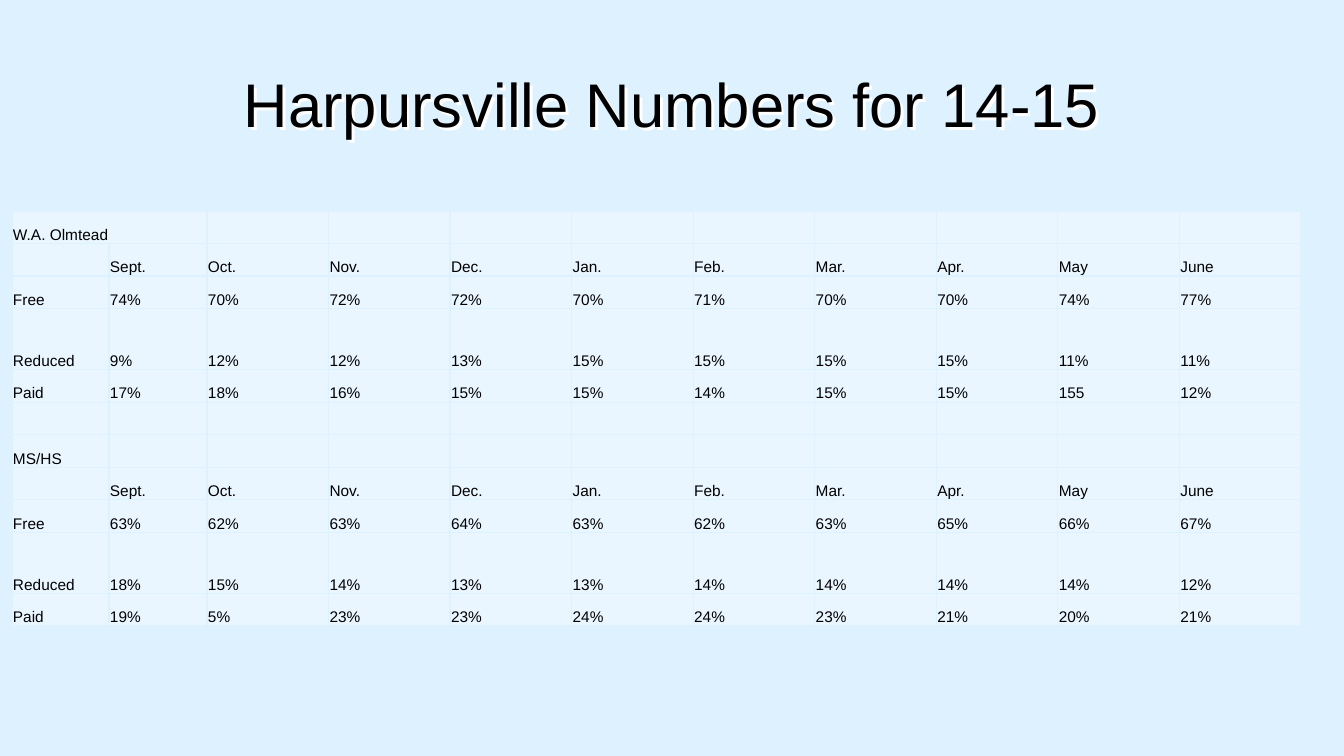
from dataclasses import dataclass

from lxml import etree
from pptx import Presentation
from pptx.dml.color import RGBColor
from pptx.enum.text import MSO_ANCHOR, PP_ALIGN
from pptx.oxml import parse_xml
from pptx.oxml.ns import nsdecls, qn
from pptx.util import Emu, Pt

MIDDLE, BOTTOM = MSO_ANCHOR.MIDDLE, MSO_ANCHOR.BOTTOM
CENTER = PP_ALIGN.CENTER
TITLE_ONLY = 5
SLIDE_W, SLIDE_H = 1344, 756
SCALE = 12192000 / SLIDE_W


@dataclass(frozen=True)
class Theme:
    font: str = "Arial"
    text: str = "000000"
    background: str = "DDF1FF"
    cell: str = "EAF6FF"
    border: str = "DDF1FF"
    shadow: str = "FFFFFF"
    title_size: int = 44
    cell_size: int = 11


def px(n):
    return Emu(round(n * SCALE))


def split(total, count, fixed):
    """Share what the fixed sizes leave equally among the other tracks."""
    rest = (total - sum(fixed.values())) / (count - len(fixed))
    return [px(fixed.get(i, rest)) for i in range(count)]


class Deck:
    def __init__(self, theme):
        self.theme = theme
        self.prs = Presentation()
        self.prs.slide_width, self.prs.slide_height = px(SLIDE_W), px(SLIDE_H)
        self.s = self.prs.slides.add_slide(self.prs.slide_layouts[TITLE_ONLY])
        fill = self.s.background.fill
        fill.solid()
        fill.fore_color.rgb = RGBColor.from_string(theme.background)

    def style(self, p, size):
        p.font.name = self.theme.font
        p.font.size = Pt(size)
        p.font.color.rgb = RGBColor.from_string(self.theme.text)

    def title(self, text, x, y, w, h):
        sp = self.s.shapes.title
        sp.left, sp.top, sp.width, sp.height = px(x), px(y), px(w), px(h)
        tf = sp.text_frame
        tf.text = text
        tf.word_wrap = True
        tf.vertical_anchor = MIDDLE
        p = tf.paragraphs[0]
        p.alignment = CENTER
        self.style(p, self.theme.title_size)
        # Light shadow down and to the right of the lettering
        sp.fill.background()
        sp._element.spPr.append(parse_xml(
            f'<a:effectLst {nsdecls("a")}>'
            '<a:outerShdw dist="36000" dir="2700000" algn="ctr" rotWithShape="0">'
            f'<a:srgbClr val="{self.theme.shadow}"/></a:outerShdw></a:effectLst>'))

    def table(self, rows, x, y, w, h, fixed_cols, fixed_rows):
        n_rows, n_cols = len(rows), max(map(len, rows))
        table = self.s.shapes.add_table(
            n_rows, n_cols, px(x), px(y), px(w), px(h)).table
        table.first_row = table.horz_banding = False
        for col, width in zip(table.columns, split(w, n_cols, fixed_cols)):
            col.width = width
        for row, height in zip(table.rows, split(h, n_rows, fixed_rows)):
            row.height = height
        for r, values in enumerate(rows):
            for c in range(n_cols):
                text = values[c] if c < len(values) else ""
                self.cell(table.cell(r, c), text)
        return table

    def cell(self, cell, text):
        cell.text = text
        cell.vertical_anchor = BOTTOM
        cell.margin_left = cell.margin_right = cell.margin_top = px(1)
        cell.margin_bottom = 0
        self.style(cell.text_frame.paragraphs[0], self.theme.cell_size)
        cell.fill.solid()
        cell.fill.fore_color.rgb = RGBColor.from_string(self.theme.cell)
        # Borders come before the fill in the cell properties
        tc_pr = cell._tc.get_or_add_tcPr()
        for i, side in enumerate(("lnL", "lnR", "lnT", "lnB")):
            ln = etree.Element(qn(f"a:{side}"), w=str(Pt(1)))
            fill = etree.SubElement(ln, qn("a:solidFill"))
            etree.SubElement(fill, qn("a:srgbClr"), val=self.theme.border)
            tc_pr.insert(i, ln)


MONTHS = ["", *"Sept. Oct. Nov. Dec. Jan. Feb. Mar. Apr. May June".split()]


def school(name, free, reduced, paid):
    return [[name], MONTHS, ["Free", *free.split()],
            ["Reduced", *reduced.split()], ["Paid", *paid.split()]]


def main():
    deck = Deck(Theme())
    deck.title("Harpursville Numbers for 14-15", 67, 46, 1210, 114)

    # Meal shares by month, one block per school
    rows = [
        *school("W.A. Olmtead",
                "74% 70% 72% 72% 70% 71% 70% 70% 74% 77%",
                "9% 12% 12% 13% 15% 15% 15% 15% 11% 11%",
                "17% 18% 16% 15% 15% 14% 15% 15% 155 12%"),
        [],
        *school("MS/HS",
                "63% 62% 63% 64% 63% 62% 63% 65% 66% 67%",
                "18% 15% 14% 13% 13% 14% 14% 14% 14% 12%",
                "19% 5% 23% 23% 24% 24% 23% 21% 20% 21%"),
    ]
    table = deck.table(rows, 12, 211, 1289, 415,
                       fixed_cols={0: 97, 1: 98}, fixed_rows={3: 61, 9: 61})
    table.cell(0, 0).merge(table.cell(0, 1))

    deck.prs.save("out.pptx")


if __name__ == "__main__":
    main()
